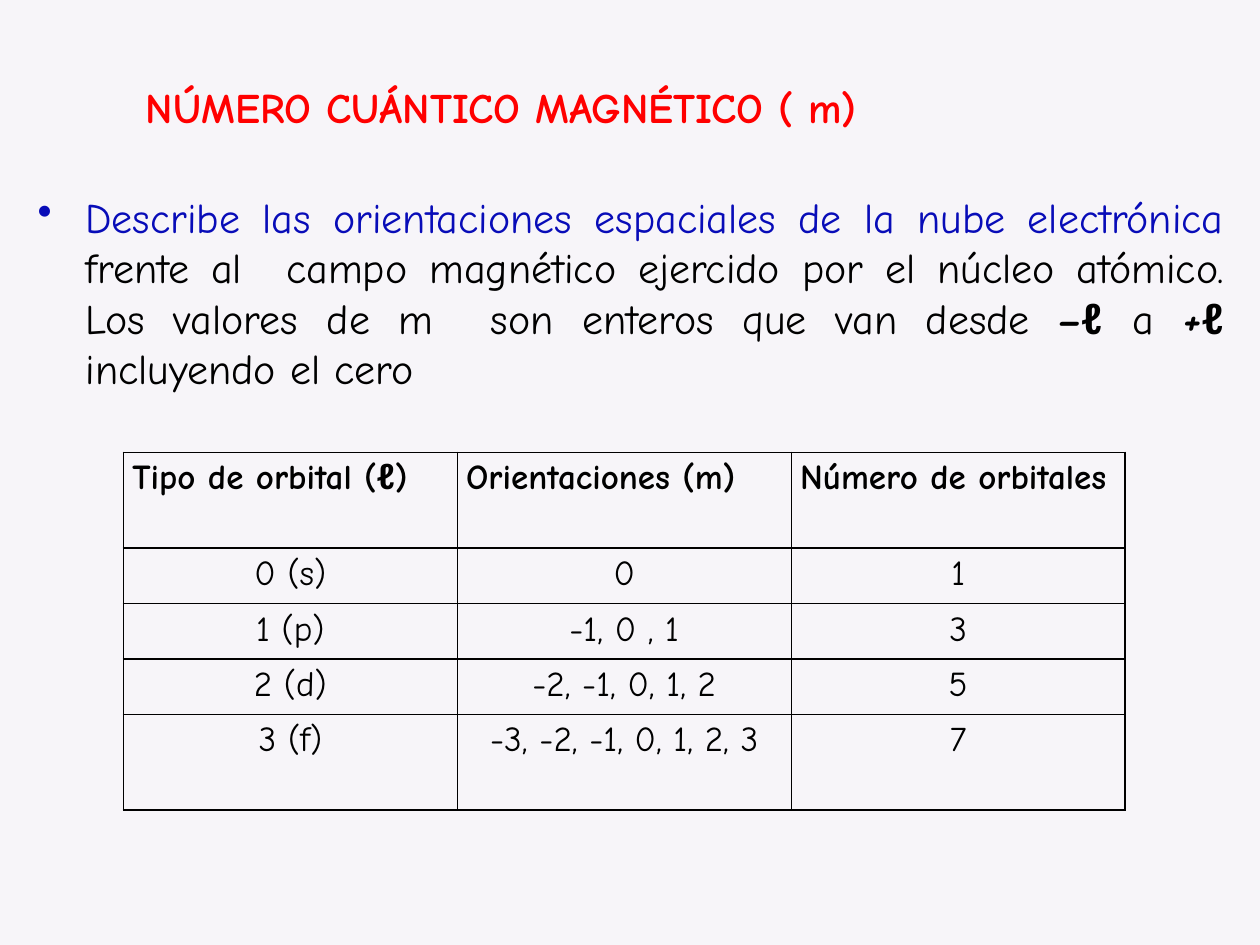
import dataclasses

import lxml.etree
import pptx
import pptx.dml.color
import pptx.enum.text
import pptx.oxml
import pptx.oxml.ns
import pptx.util

Inches = pptx.util.Inches
Pt = pptx.util.Pt
Align = pptx.enum.text.PP_ALIGN
qn = pptx.oxml.ns.qn


def color(value):
    return pptx.dml.color.RGBColor.from_string(value)


@dataclasses.dataclass(frozen=True)
class Theme:
    font: str = "Comic Neue"
    background: str = "F7F5F9"
    title: str = "FF0000"
    accent: str = "080CB8"
    text: str = "000000"
    heading_size: int = 24
    table_size: int = 20
    border_width: float = 1


class SlideBuilder:
    def __init__(self, deck, theme):
        self.theme = theme
        self.slide = deck.slides.add_slide(deck.slide_layouts[6])
        fill = self.slide.background.fill
        fill.solid()
        fill.fore_color.rgb = color(theme.background)

    def style(self, para, size, value, bold=None):
        para.font.name = self.theme.font
        para.font.size = Pt(size)
        para.font.color.rgb = color(value)
        para.font.bold = bold

    def text_box(self, left, top, width, height):
        box = self.slide.shapes.add_textbox(
            Inches(left), Inches(top), Inches(width), Inches(height)
        )
        box.text_frame.word_wrap = True
        return box.text_frame.paragraphs[0]

    def title(self, text, *place):
        para = self.text_box(*place)
        para.text = text
        self.style(para, self.theme.heading_size, self.theme.title, True)

    def bullet(self, pieces, *place):
        para = self.text_box(*place)
        para.alignment = Align.JUSTIFY
        self.style(para, self.theme.heading_size, self.theme.text)
        properties = para._p.get_or_add_pPr()
        indent = Inches(0.38)
        properties.set("marL", str(indent))
        properties.set("indent", str(-indent))
        mark = pptx.oxml.parse_xml(
            f'<a:buChar {pptx.oxml.ns.nsdecls("a")} char="•"/>'
        )
        properties.insert(0, mark)
        for text, look in pieces:
            span = para.add_run()
            span.text = text
            span.font.color.rgb = color(look.get("color", self.theme.text))
            span.font.bold = look.get("bold")
            span.font.italic = look.get("italic")

    def borders(self, cell):
        properties = cell._tc.get_or_add_tcPr()
        for position, side in enumerate(("lnL", "lnR", "lnT", "lnB")):
            line = lxml.etree.Element(
                qn(f"a:{side}"), w=str(Pt(self.theme.border_width))
            )
            fill = lxml.etree.SubElement(line, qn("a:solidFill"))
            lxml.etree.SubElement(fill, qn("a:srgbClr"), val=self.theme.text)
            properties.insert(position, line)

    def table(self, rows, heights, left, top, column_width):
        columns = len(rows[0])
        table = self.slide.shapes.add_table(
            len(rows), columns, Inches(left), Inches(top),
            Inches(column_width * columns), Inches(sum(heights)),
        ).table
        table.first_row = table.horz_banding = False
        for column in table.columns:
            column.width = Inches(column_width)
        for row_index, values in enumerate(rows):
            table.rows[row_index].height = Inches(heights[row_index])
            header = row_index == 0
            for column_index, text in enumerate(values):
                cell = table.cell(row_index, column_index)
                cell.fill.background()
                cell.margin_left = cell.margin_right = Inches(0.07)
                cell.margin_top = cell.margin_bottom = 0
                self.borders(cell)
                para = cell.text_frame.paragraphs[0]
                para.text = text
                para.line_spacing = 1.15
                para.alignment = Align.JUSTIFY if header else Align.CENTER
                self.style(para, self.theme.table_size, self.theme.text, header)


def main():
    deck = pptx.Presentation()
    deck.slide_width, deck.slide_height = Inches(10), Inches(7.5)
    theme = Theme()
    page = SlideBuilder(deck, theme)
    page.bullet(
        [
            ("Describe las orientaciones espaciales de la nube electrónica ",
             {"color": theme.accent}),
            ("frente al  campo magnético ejercido por el núcleo atómico. "
             "Los valores de m  son enteros que van desde ", {}),
            ("–ℓ ", {"bold": True, "italic": True}),
            ("a", {}),
            (" +", {"bold": True, "italic": True}),
            ("ℓ ", {"bold": True}),
            ("incluyendo el cero", {}),
        ],
        0.2, 1.47, 9.61, 2.13,
    )
    page.title("NÚMERO CUÁNTICO MAGNÉTICO ( m)", 1.06, 0.6, 7.48, 0.81)
    page.table(
        [
            ("Tipo de orbital (ℓ)", "Orientaciones (m)", "Número de orbitales"),
            ("0 (s)", "0", "1"),
            ("1 (p)", "-1, 0 , 1", "3"),
            ("2 (d)", "-2, -1, 0, 1, 2", "5"),
            ("3 (f)", "-3, -2, -1, 0, 1, 2, 3", "7"),
        ],
        [0.76, 0.44, 0.44, 0.44, 0.76],
        0.98, 3.59, 2.65,
    )
    deck.save("out.pptx")


if __name__ == "__main__":
    main()
